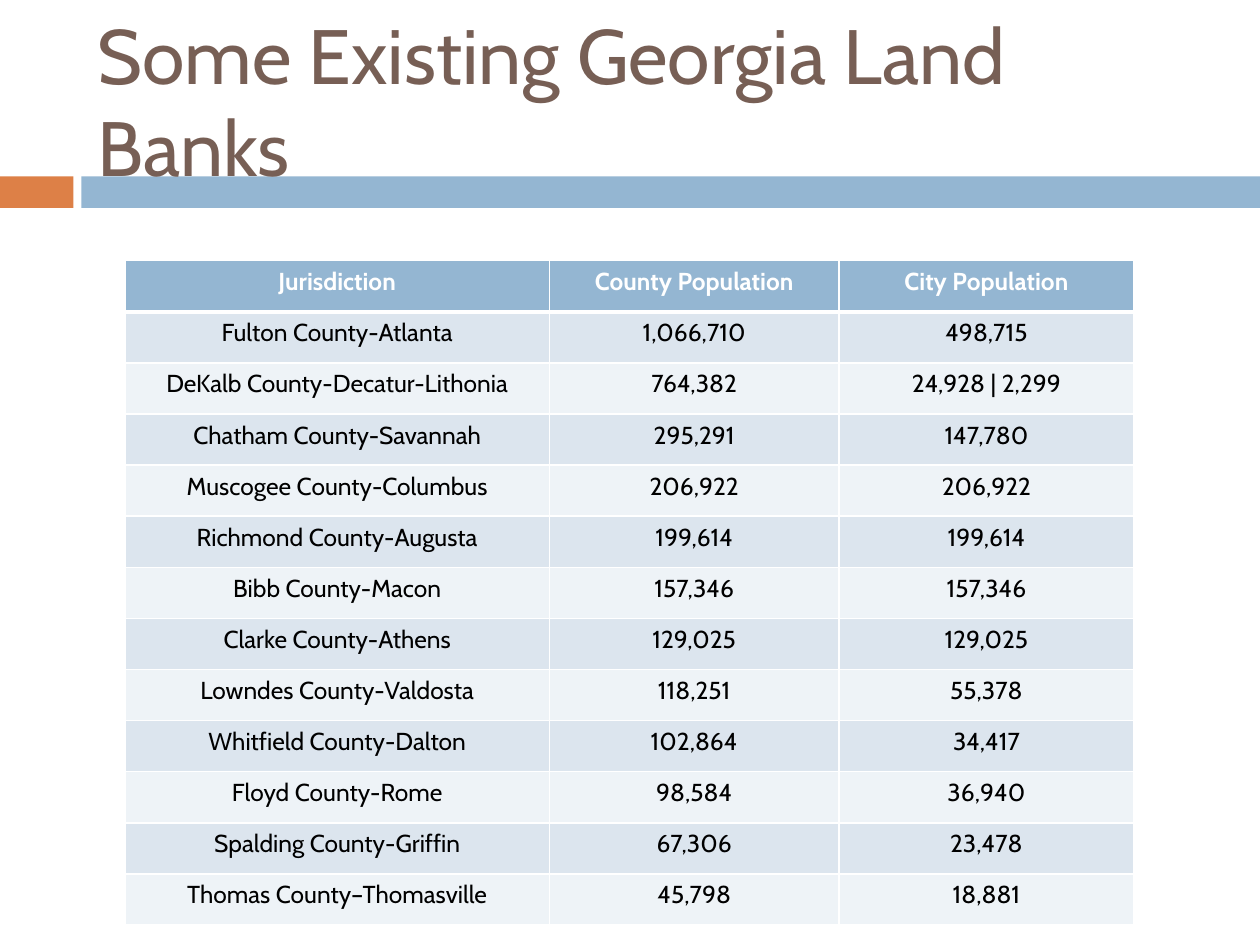
from dataclasses import dataclass

from lxml.etree import SubElement
from pptx import Presentation
from pptx.dml.color import RGBColor
from pptx.enum.shapes import MSO_SHAPE
from pptx.enum.text import MSO_ANCHOR, PP_ALIGN
from pptx.oxml.ns import qn
from pptx.util import Pt

FONT = "Cabin"
ORANGE, BLUE, BROWN = "DD8047", "94B6D2", "775F55"
WHITE, BLACK = "FFFFFF", "000000"
BANDS = ("DCE5EE", "EEF3F7")
COLUMN_WIDTHS = (242.5, 165.5, 168.5)
ROW_HEIGHT = 29.2


@dataclass(frozen=True)
class Bar:
    left: float
    width: float
    color: str


@dataclass(frozen=True)
class LandBank:
    jurisdiction: str
    county: str
    city: str


BARS = (Bar(0, 42, ORANGE), Bar(46.5, 673.5, BLUE))
HEADER = LandBank("Jurisdiction", "County Population", "City Population")
LAND_BANKS = (
    LandBank("Fulton County-Atlanta", "1,066,710", "498,715"),
    LandBank("DeKalb County-Decatur-Lithonia", "764,382", "24,928 | 2,299"),
    LandBank("Chatham County-Savannah", "295,291", "147,780"),
    LandBank("Muscogee County-Columbus", "206,922", "206,922"),
    LandBank("Richmond County-Augusta", "199,614", "199,614"),
    LandBank("Bibb County-Macon", "157,346", "157,346"),
    LandBank("Clarke County-Athens", "129,025", "129,025"),
    LandBank("Lowndes County-Valdosta", "118,251", "55,378"),
    LandBank("Whitfield County-Dalton", "102,864", "34,417"),
    LandBank("Floyd County-Rome", "98,584", "36,940"),
    LandBank("Spalding County-Griffin", "67,306", "23,478"),
    LandBank("Thomas County–Thomasville", "45,798", "18,881"),
)


def rgb(value: str) -> RGBColor:
    return RGBColor.from_string(value)


def style(p, size: float, color: str, bold: bool = False) -> None:
    for r in p.runs:
        r.font.name = FONT
        r.font.size = Pt(size)
        r.font.bold = bold
        r.font.color.rgb = rgb(color)


def draw_bar(s, bar: Bar) -> None:
    sp = s.shapes.add_shape(MSO_SHAPE.RECTANGLE, Pt(bar.left), Pt(100.8),
                            Pt(bar.width), Pt(18))
    sp.shadow.inherit = False
    sp.fill.solid()
    sp.fill.fore_color.rgb = rgb(bar.color)
    sp.line.fill.background()


def draw_title(s, text: str) -> None:
    sp = s.shapes.add_textbox(Pt(48.5), Pt(18), Pt(642), Pt(78))
    tf = sp.text_frame
    tf.word_wrap = True
    tf.vertical_anchor = MSO_ANCHOR.MIDDLE
    tf.text = text
    style(tf.paragraphs[0], 44, BROWN)


def set_borders(cell, bottom: float, top: float) -> None:
    tc_pr = cell._tc.get_or_add_tcPr()
    widths = (("a:lnL", 1), ("a:lnR", 1), ("a:lnT", top), ("a:lnB", bottom))
    for tag, width in widths:
        ln = SubElement(tc_pr, qn(tag), w=str(Pt(width)))
        fill = SubElement(ln, qn("a:solidFill"))
        SubElement(fill, qn("a:srgbClr"), val=WHITE)


def draw_cell(cell, text: str, row: int) -> None:
    header = row == 0
    cell.margin_left = cell.margin_right = Pt(6)
    cell.margin_top = cell.margin_bottom = Pt(3.6)
    cell.text_frame.text = text
    p = cell.text_frame.paragraphs[0]
    p.alignment = PP_ALIGN.CENTER
    style(p, 14, WHITE if header else BLACK, header)
    set_borders(cell, bottom=3 if header else 1, top=3 if row == 1 else 1)
    cell.fill.solid()
    cell.fill.fore_color.rgb = rgb(BLUE if header else BANDS[(row - 1) % 2])


def draw_table(s, banks: tuple[LandBank, ...]) -> None:
    rows = (HEADER, *banks)
    table = s.shapes.add_table(len(rows), len(COLUMN_WIDTHS), Pt(71.5), Pt(149),
                               Pt(sum(COLUMN_WIDTHS)),
                               Pt(ROW_HEIGHT * len(rows))).table
    for column, width in zip(table.columns, COLUMN_WIDTHS):
        column.width = Pt(width)
    for i, bank in enumerate(rows):
        table.rows[i].height = Pt(ROW_HEIGHT)
        for j, text in enumerate((bank.jurisdiction, bank.county, bank.city)):
            draw_cell(table.cell(i, j), text, i)


def main() -> None:
    prs = Presentation()
    prs.slide_width, prs.slide_height = Pt(720), Pt(540)
    s = prs.slides.add_slide(prs.slide_layouts[6])
    for bar in BARS:
        draw_bar(s, bar)
    draw_title(s, "Some Existing Georgia Land Banks")
    draw_table(s, LAND_BANKS)
    prs.save("out.pptx")


if __name__ == "__main__":
    main()
